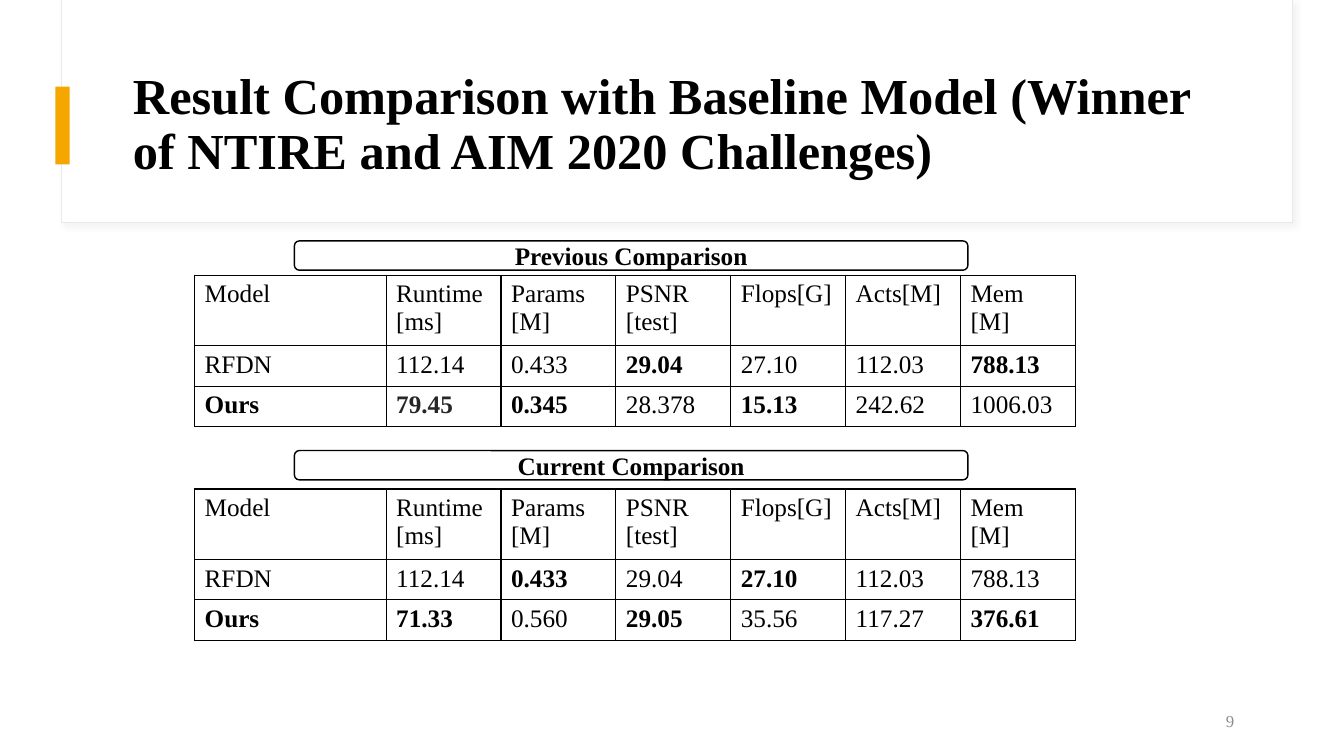
from dataclasses import dataclass

import lxml.etree
import pptx
import pptx.dml.color
import pptx.enum.shapes
import pptx.enum.text
import pptx.oxml
import pptx.oxml.ns
import pptx.util

RGBColor = pptx.dml.color.RGBColor
Align = pptx.enum.text.PP_ALIGN
Preset = pptx.enum.shapes.MSO_SHAPE

BLACK = RGBColor(0x00, 0x00, 0x00)
WHITE = RGBColor(0xFF, 0xFF, 0xFF)
CHARCOAL = RGBColor(0x26, 0x26, 0x26)
GRAY = RGBColor(0x8C, 0x8C, 0x8C)
PALE_GRAY = RGBColor(0xE9, 0xE9, 0xE9)
SHADOW_GRAY = RGBColor(0xD9, 0xD9, 0xD9)
AMBER = RGBColor(0xF5, 0xA7, 0x00)

FONT = "Times New Roman"
SLIDE_WIDTH = pptx.util.Inches(13.33)
SLIDE_HEIGHT = pptx.util.Inches(7.5)

# Lengths below are percentages of the slide's width or height.
TABLE_LEFT = 14.48
MODEL_COLUMN, METRIC_COLUMN = 14.25, 8.55
BANNER_LEFT, BANNER_WIDTH, BANNER_HEIGHT = 21.91, 50.11, 3.87

HEADINGS = ("Model", "Runtime[ms]", "Params [M]", "PSNR [test]",
            "Flops[G]", "Acts[M]", "Mem [M]")
BASELINE = ("RFDN", "112.14", "0.433", "29.04", "27.10", "112.03", "788.13")


@dataclass(frozen=True)
class Box:
    left: float
    top: float
    width: float
    height: float

    def emu(self) -> tuple[int, int, int, int]:
        return (across(self.left), down(self.top),
                across(self.width), down(self.height))


@dataclass(frozen=True)
class Comparison:
    heading: str
    banner_top: float
    table_top: float
    row_heights: tuple[float, ...]
    ours: tuple[str, ...]
    bold: frozenset[str]
    softened: frozenset[str] = frozenset()


COMPARISONS = (
    Comparison(
        "Previous Comparison", 31.87, 36.4, (8.73, 5.05, 5.05),
        ("Ours", "79.45", "0.345", "28.378", "15.13", "242.62", "1006.03"),
        frozenset({"29.04", "788.13", "Ours", "79.45", "0.345", "15.13"}),
        frozenset({"79.45"})),
    Comparison(
        "Current Comparison", 59.6, 64.67, (8.73, 5.05, 5.35),
        ("Ours", "71.33", "0.560", "29.05", "35.56", "117.27", "376.61"),
        frozenset({"0.433", "27.10", "Ours", "71.33", "29.05", "376.61"})),
)


def across(share: float) -> int:
    return round(SLIDE_WIDTH * share / 100)


def down(share: float) -> int:
    return round(SLIDE_HEIGHT * share / 100)


def write(frame, text: str, *, size: float = 18, color: RGBColor = BLACK,
          bold: bool = False, align=Align.LEFT, spacing: float = 1.0) -> None:
    frame.word_wrap = True
    paragraph = frame.paragraphs[0]
    paragraph.alignment = align
    paragraph.line_spacing = spacing
    run = paragraph.add_run()
    run.text = text
    run.font.name = FONT
    run.font.size = pptx.util.Pt(size)
    run.font.bold = bold
    run.font.color.rgb = color


def add_text(slide, box: Box, text: str, **style) -> None:
    frame = slide.shapes.add_textbox(*box.emu()).text_frame
    frame.vertical_anchor = pptx.enum.text.MSO_ANCHOR.MIDDLE
    write(frame, text, **style)


def add_panel(slide, box: Box, fill: RGBColor, *, preset=Preset.RECTANGLE,
              line: RGBColor | None = None, line_width: float = 1):
    panel = slide.shapes.add_shape(preset, *box.emu())
    panel.shadow.inherit = False
    panel.fill.solid()
    panel.fill.fore_color.rgb = fill
    if line is None:
        panel.line.fill.background()
    else:
        panel.line.color.rgb = line
        panel.line.width = pptx.util.Pt(line_width)
    return panel


def cast_shadow(panel) -> None:
    """Give the panel a faint shadow toward its lower right."""
    effects = panel._element.spPr.find(pptx.oxml.ns.qn("a:effectLst"))
    effects.append(pptx.oxml.parse_xml(
        f'<a:outerShdw {pptx.oxml.ns.nsdecls("a")} '
        f'blurRad="{pptx.util.Pt(4)}" dist="{pptx.util.Pt(3)}" '
        f'dir="{45 * 60000}" algn="tl" rotWithShape="0">'
        f'<a:srgbClr val="{SHADOW_GRAY}"><a:alpha val="30000"/></a:srgbClr>'
        '</a:outerShdw>'))


def outline_cell(cell) -> None:
    properties = cell._tc.get_or_add_tcPr()
    for position, side in enumerate(("lnL", "lnR", "lnT", "lnB")):
        properties.insert(position, pptx.oxml.parse_xml(
            f'<a:{side} {pptx.oxml.ns.nsdecls("a")} w="{pptx.util.Pt(1)}">'
            f'<a:solidFill><a:srgbClr val="{BLACK}"/></a:solidFill>'
            f'</a:{side}>'))


def add_results_table(slide, comparison: Comparison) -> None:
    records = (HEADINGS, BASELINE, comparison.ours)
    widths = [MODEL_COLUMN] + [METRIC_COLUMN] * (len(HEADINGS) - 1)
    box = Box(TABLE_LEFT, comparison.table_top,
              sum(widths), sum(comparison.row_heights))
    table = slide.shapes.add_table(
        len(records), len(HEADINGS), *box.emu()).table
    for column, width in zip(table.columns, widths):
        column.width = across(width)
    for row, height, record in zip(table.rows, comparison.row_heights, records):
        row.height = down(height)
        for cell, value in zip(row.cells, record):
            cell.fill.background()
            outline_cell(cell)
            write(cell.text_frame, value, bold=value in comparison.bold,
                  color=CHARCOAL if value in comparison.softened else BLACK)


def add_banner(slide, comparison: Comparison) -> None:
    box = Box(BANNER_LEFT, comparison.banner_top, BANNER_WIDTH, BANNER_HEIGHT)
    banner = add_panel(slide, box, WHITE, preset=Preset.ROUNDED_RECTANGLE,
                       line=BLACK)
    banner.text_frame.vertical_anchor = pptx.enum.text.MSO_ANCHOR.MIDDLE
    write(banner.text_frame, comparison.heading, bold=True, align=Align.CENTER)


def main() -> None:
    deck = pptx.Presentation()
    deck.slide_width, deck.slide_height = SLIDE_WIDTH, SLIDE_HEIGHT
    slide = deck.slides.add_slide(deck.slide_layouts[6])

    header = add_panel(slide, Box(4.58, 0, 91.6, 29.47), WHITE,
                       line=PALE_GRAY, line_width=0.75)
    cast_shadow(header)
    add_panel(slide, Box(4.13, 11.47, 1.05, 10.27), AMBER)
    add_text(slide, Box(9.15, 8, 83.42, 17.2),
             "Result Comparison with Baseline Model "
             "(Winner of NTIRE and AIM 2020 Challenges)",
             size=36, bold=True, spacing=0.9)
    add_text(slide, Box(70.07, 92.67, 22.5, 5.33), "9",
             size=12, color=GRAY, align=Align.RIGHT)

    for comparison in COMPARISONS:
        add_results_table(slide, comparison)
        add_banner(slide, comparison)

    deck.save("out.pptx")


if __name__ == "__main__":
    main()
